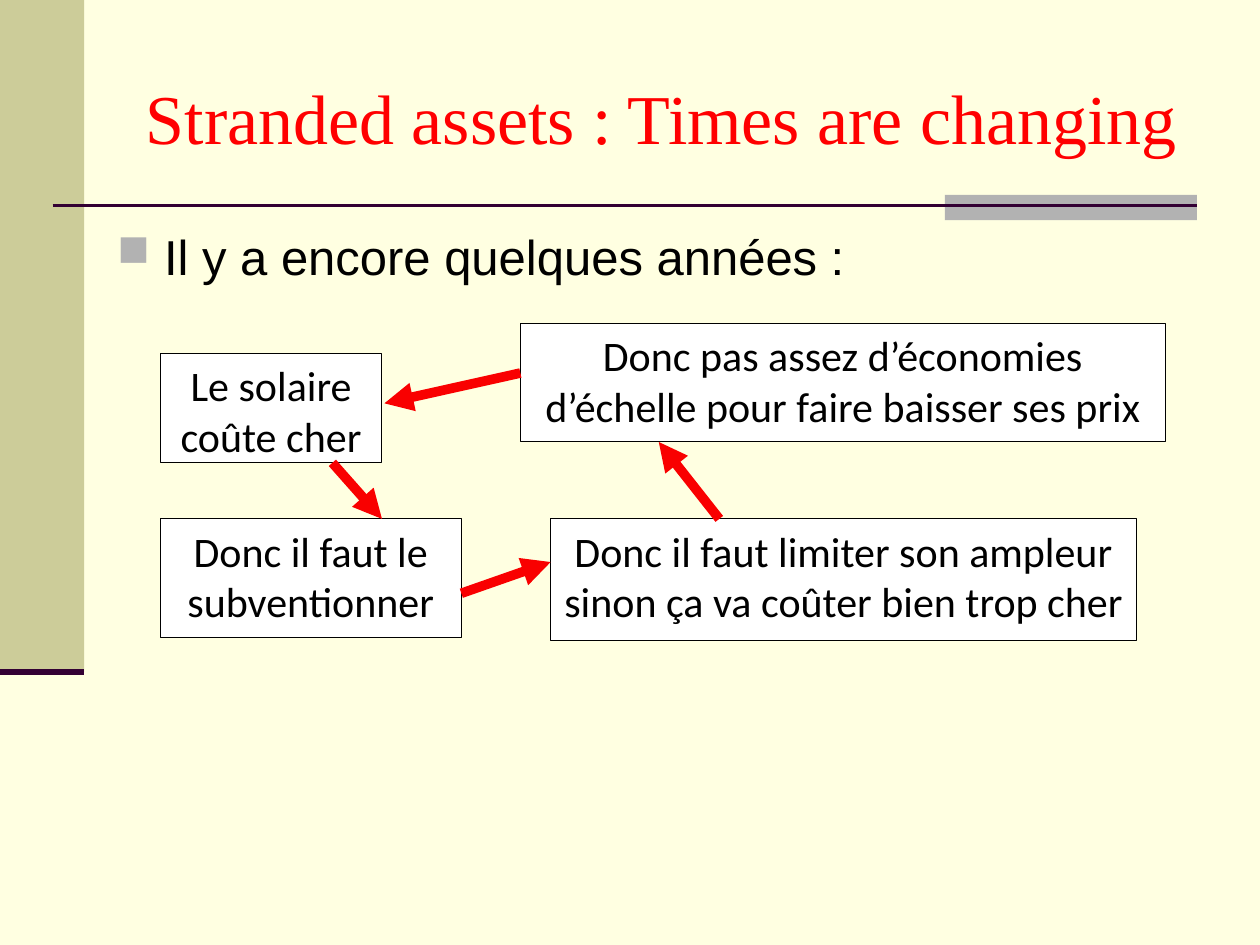
from lxml import etree
from pptx import Presentation
from pptx import util as u
from pptx.dml.color import RGBColor
from pptx.enum import shapes, text
from pptx.oxml.ns import qn

theme = {
    "back": "FFFFE1", "band": "CCCC99", "grey": "B2B2B2", "rule": "330033",
    "red": "FF0000", "arrow": "F90000", "ink": "000000", "box": "FFFFFF",
    "title": {"name": "Times New Roman", "size": u.Pt(40)},
    "body": {"name": "Arial", "size": u.Pt(28)},
    "note": {"name": "Calibri", "size": u.Pt(24)},
}


def rgb(key):
    return RGBColor.from_string(theme[key])


def write(shape, words, style, ink, align):
    frame = shape.text_frame
    frame.word_wrap = True
    para = frame.paragraphs[0]
    para.alignment = align
    run = para.add_run()
    run.text = words
    for name, value in theme[style].items():
        setattr(run.font, name, value)
    run.font.color.rgb = rgb(ink)
    return para


deck = Presentation()
deck.slide_width, deck.slide_height = u.Cm(25.4), u.Cm(19.05)
slide = deck.slides.add_slide(deck.slide_layouts[5])
slide.background.fill.solid()
slide.background.fill.fore_color.rgb = rgb("back")
parts = slide.shapes

# Side band and grey bar, then the four boxes of the loop
middle = text.PP_ALIGN.CENTER
for left, top, width, height, fill, words in [
    (0, 0, 1.7, 13.55, "band", ""),
    (19.05, 3.93, 5.08, 0.51, "grey", ""),
    (3.23, 10.46, 6.07, 2.39, "box", "Donc il faut le subventionner"),
    (3.23, 7.13, 4.47, 2.2, "box", "Le solaire coûte cher"),
    (11.1, 10.46, 11.81, 2.45, "box",
     "Donc il faut limiter son ampleur sinon ça va coûter bien trop cher"),
    (10.49, 6.52, 13, 2.39, "box",
     "Donc pas assez d’économies d’échelle pour faire baisser ses prix"),
]:
    rect = parts.add_shape(shapes.MSO_SHAPE.RECTANGLE,
                           *map(u.Cm, (left, top, width, height)))
    rect.shadow.inherit = False
    rect.fill.solid()
    rect.fill.fore_color.rgb = rgb(fill)
    if words:
        rect.line.color.rgb = rgb("ink")
        rect.line.width = u.Pt(0.5)
        rect.text_frame.vertical_anchor = text.MSO_ANCHOR.TOP
        write(rect, words, "note", "ink", middle)
    else:
        rect.line.fill.background()

# Rules and arrows
for x1, y1, x2, y2, color, weight in [
    (1.06, 4.14, 24.13, 4.14, "rule", 1.5),
    (0, 13.55, 1.7, 13.55, "rule", 3.5),
    (6.7, 9.33, 7.7, 10.46, "arrow", 5.5),
    (9.3, 11.96, 11.1, 11.33, "arrow", 5.5),
    (14.5, 10.46, 13.28, 8.91, "arrow", 5.5),
    (10.49, 7.52, 7.75, 8.13, "arrow", 5.5),
]:
    line = parts.add_connector(shapes.MSO_CONNECTOR.STRAIGHT,
                               *map(u.Cm, (x1, y1, x2, y2)))
    line.line.color.rgb = rgb(color)
    line.line.width = u.Pt(weight)
    if color == "arrow":
        etree.SubElement(line.line._get_or_add_ln(), qn("a:tailEnd"), type="triangle")
    etree.SubElement(line._element.spPr, qn("a:effectLst"))

# Title
title = parts.title
for name, value in {"left": 2.54, "top": 0.76, "width": 21.59, "height": 3.18}.items():
    setattr(title, name, u.Cm(value))
title.text_frame.vertical_anchor = text.MSO_ANCHOR.MIDDLE
write(title, "Stranded assets : Times are changing", "title", "red", middle)

# Bulleted lead line
lead = parts.add_textbox(*map(u.Cm, (2.11, 4.45, 22.4, 12.57)))
para = write(lead, "Il y a encore quelques années :", "body", "ink", text.PP_ALIGN.LEFT)
para.space_before = u.Pt(12)
props = para._p.get_or_add_pPr()
props.set("marL", str(u.Cm(0.95)))
props.set("indent", str(u.Cm(-0.95)))
tint = etree.SubElement(props, qn("a:buClr"))
etree.SubElement(tint, qn("a:srgbClr"), val=theme["grey"])
etree.SubElement(props, qn("a:buSzPct"), val="90000")
etree.SubElement(props, qn("a:buChar"), char="■")

deck.save("out.pptx")
